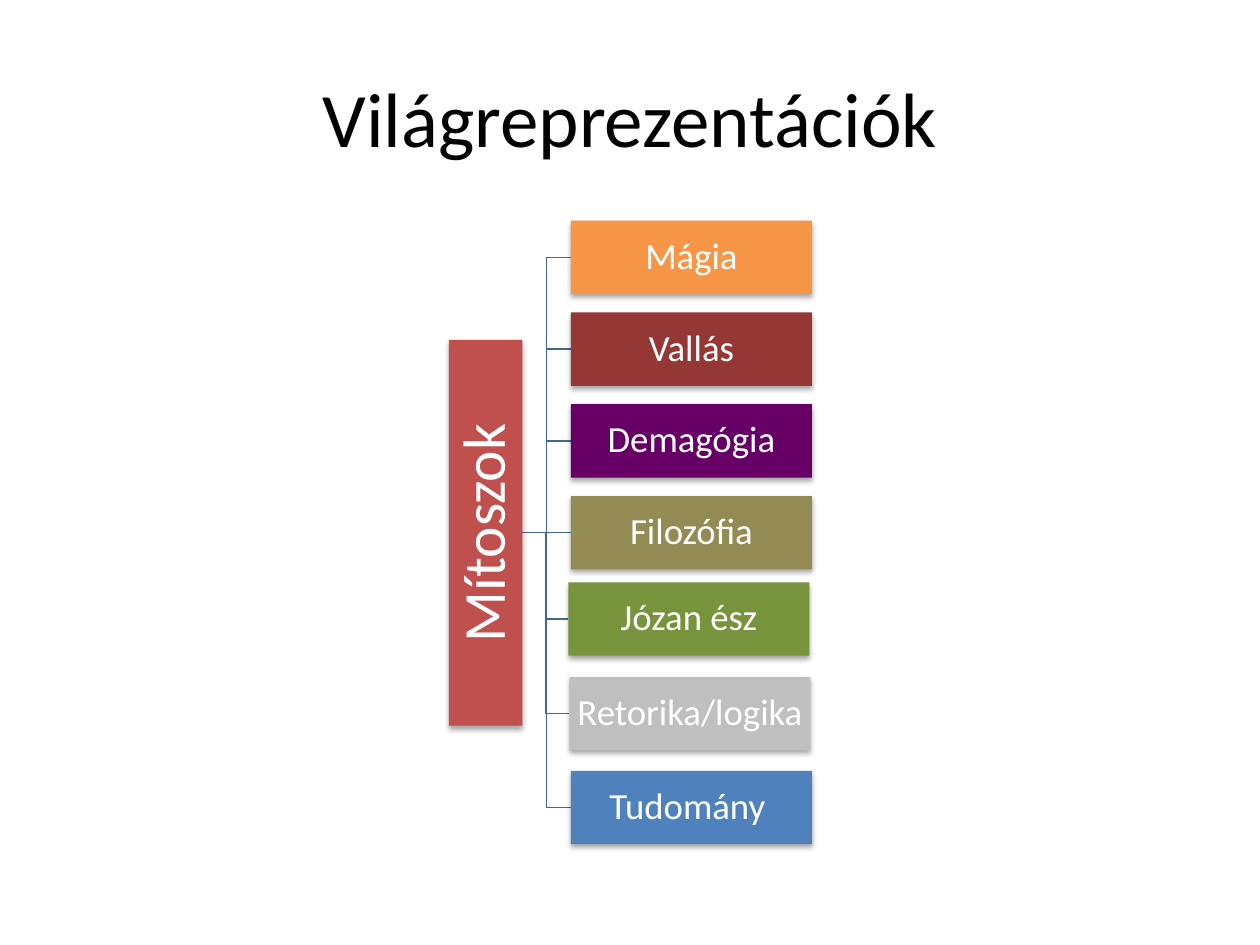
"""Build a slide with a one-to-seven tree of world representations."""
import pptx
import pptx.dml.color
import pptx.enum.shapes
import pptx.enum.text
import pptx.oxml
import pptx.oxml.ns
import pptx.util

Cm = pptx.util.Cm
Pt = pptx.util.Pt

TITLE = "Világreprezentációk"
ROOT = "Mítoszok"
COLORS = {
    "title": "000000", "label": "FFFFFF", "line": "3F6797", "root": "C0504D",
    "orange": "F79646", "maroon": "953735", "purple": "660066",
    "olive": "948A54", "green": "77933C", "gray": "BFBFBF", "blue": "4F81BD",
}
BRANCHES = [
    ("Mágia", "orange", 11.51, 4.45),
    ("Vallás", "maroon", 11.51, 6.3),
    ("Demagógia", "purple", 11.51, 8.15),
    ("Filozófia", "olive", 11.51, 10),
    ("Józan ész", "green", 11.46, 11.74),
    ("Retorika/logika", "gray", 11.48, 13.65),
    ("Tudomány ", "blue", 11.51, 15.54),
]
BOX_WIDTH, BOX_HEIGHT = 4.86, 1.48
ROOT_LENGTH, ROOT_CENTER = 7.78, 9.79
TRUNK_X = ROOT_CENTER + BOX_HEIGHT / 2
TRUNK_Y = BRANCHES[3][3] + BOX_HEIGHT / 2
SHADOW = (
    '<a:effectLst %s><a:outerShdw blurRad="39370" dist="22860" dir="5400000" rotWithShape="0">'
    '<a:srgbClr val="000000"><a:alpha val="35000"/></a:srgbClr></a:outerShdw></a:effectLst>'
) % pptx.oxml.ns.nsdecls("a")
NO_EFFECT = "<a:effectLst %s/>" % pptx.oxml.ns.nsdecls("a")


def rgb(name):
    return pptx.dml.color.RGBColor.from_string(COLORS[name])


def write(shape, text, size, color, margin):
    frame = shape.text_frame
    frame.word_wrap = True
    frame.vertical_anchor = pptx.enum.text.MSO_ANCHOR.MIDDLE
    frame.margin_left = frame.margin_right = Cm(margin)
    frame.margin_top = frame.margin_bottom = Cm(margin)
    para = frame.paragraphs[0]
    para.text = text
    para.alignment = pptx.enum.text.PP_ALIGN.CENTER
    para.font.name = "Calibri"
    para.font.size = Pt(size)
    para.font.color.rgb = rgb(color)
    return para


def add_box(page, text, color, left, top, width, size, margin):
    box = page.shapes.add_shape(
        pptx.enum.shapes.MSO_SHAPE.RECTANGLE, Cm(left), Cm(top), Cm(width), Cm(BOX_HEIGHT))
    box.fill.solid()
    box.fill.fore_color.rgb = rgb(color)
    box.line.fill.background()
    box._element.spPr.append(pptx.oxml.parse_xml(SHADOW))
    para = write(box, text, size, "label", margin)
    para.line_spacing = 0.9
    return box


def add_branch_line(page, left, middle):
    kinds = pptx.enum.shapes.MSO_CONNECTOR
    kind = kinds.STRAIGHT if middle == TRUNK_Y else kinds.ELBOW
    line = page.shapes.add_connector(kind, Cm(TRUNK_X), Cm(TRUNK_Y), Cm(left), Cm(middle))
    line.line.color.rgb = rgb("line")
    line.line.width = Pt(0.75)
    line._element.spPr.append(pptx.oxml.parse_xml(NO_EFFECT))


def main():
    deck = pptx.Presentation()
    deck.slide_width, deck.slide_height = Cm(25.4), Cm(19.05)
    page = deck.slides.add_slide(deck.slide_layouts[6])

    title = page.shapes.add_textbox(Cm(1.27), Cm(0.76), Cm(22.86), Cm(3.18))
    write(title, TITLE, 44, "title", 0.13)

    for _, _, left, top in BRANCHES:
        add_branch_line(page, left, top + BOX_HEIGHT / 2)

    root = add_box(page, ROOT, "root", ROOT_CENTER - ROOT_LENGTH / 2,
                   TRUNK_Y - BOX_HEIGHT / 2, ROOT_LENGTH, 34, 0.05)
    root.rotation = 270
    for text, color, left, top in BRANCHES:
        add_box(page, text, color, left, top, BOX_WIDTH, 21, 0.03)

    deck.save("out.pptx")


if __name__ == "__main__":
    main()
